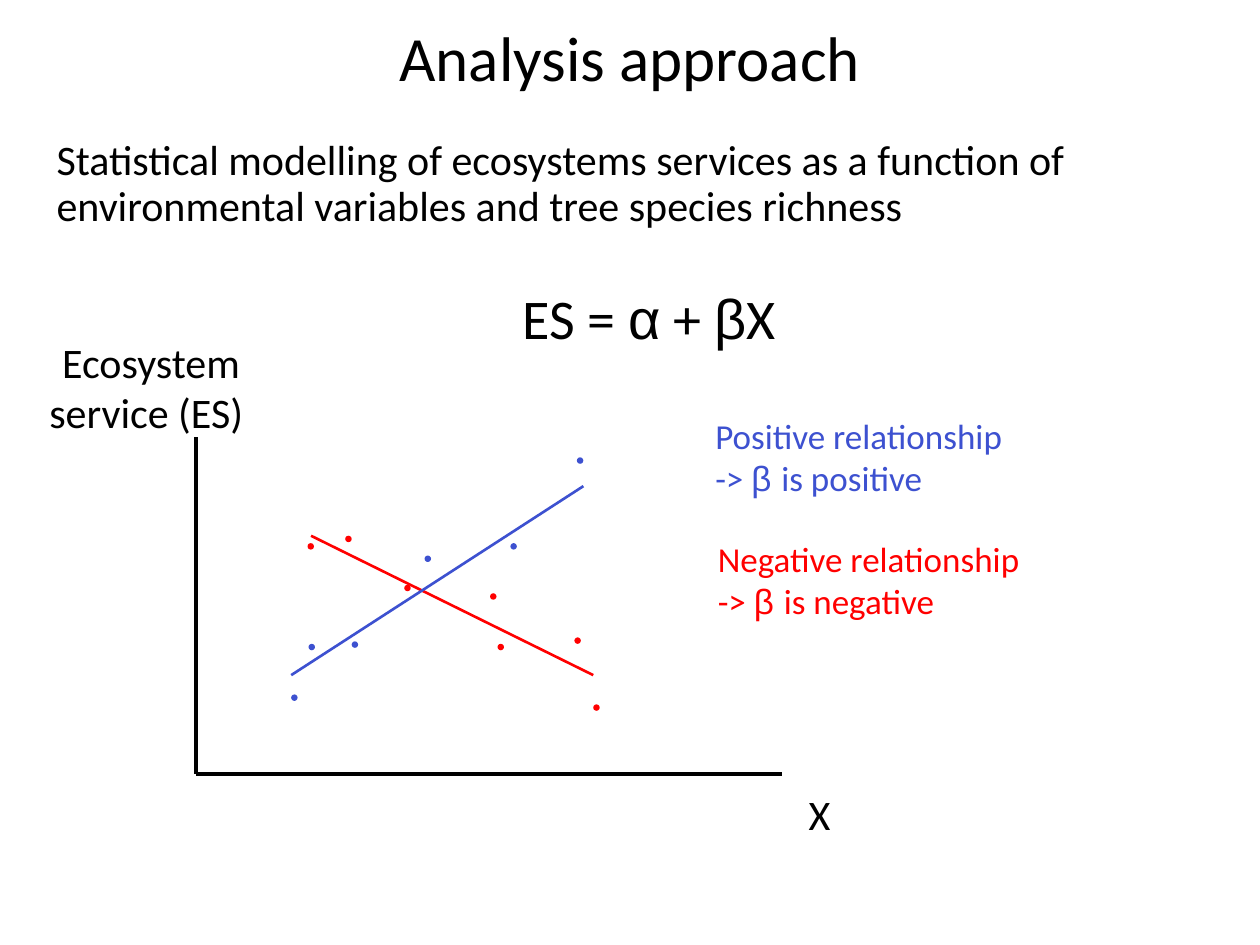
from typing import NamedTuple

import pptx
import pptx.dml.color
import pptx.enum.shapes
import pptx.enum.text
import pptx.oxml.ns
import pptx.slide
import pptx.text.text
import pptx.util
from lxml import etree

Cm = pptx.util.Cm
RGBColor = pptx.dml.color.RGBColor
Align = pptx.enum.text.PP_ALIGN
Anchor = pptx.enum.text.MSO_ANCHOR

BLACK = RGBColor(0x00, 0x00, 0x00)
RED = RGBColor(0xFF, 0x00, 0x00)
BLUE = RGBColor(0x3D, 0x51, 0xD0)
LATIN_FONT = "Calibri"
GREEK_FONT = "Arial"
DOT_SIZE = 0.13

Point = tuple[float, float]


class Box(NamedTuple):
    """Left, top, width and height in centimetres."""
    left: float
    top: float
    width: float
    height: float


class Relationship(NamedTuple):
    sign: str
    color: RGBColor
    label: Box
    start: Point
    end: Point
    dots: list[Point]


RELATIONSHIPS = [
    Relationship("negative", RED, Box(14.22, 10.72, 8.41, 1.96), (6.27, 10.8), (11.96, 13.61),
                 [(6.2, 10.95), (6.96, 10.8), (8.15, 11.79), (9.88, 11.96),
                  (10.03, 12.98), (11.96, 14.2), (11.58, 12.85)]),
    Relationship("positive", BLUE, Box(14.17, 8.23, 8.41, 1.96), (5.87, 13.61), (11.76, 9.8),
                 [(5.87, 14), (6.22, 12.98), (7.09, 12.93), (8.56, 11.2),
                  (10.29, 10.95), (11.63, 9.22)]),
]


def add_span(para: pptx.text.text._Paragraph, text: str, size: float, color: RGBColor) -> None:
    span = para.add_run()
    span.text = text
    span.font.size = pptx.util.Pt(size)
    span.font.color.rgb = color
    is_greek = text.strip() in ("α", "β")
    span.font.name = GREEK_FONT if is_greek else LATIN_FONT


def add_text(page: pptx.slide.Slide, box: Box, *lines: list[str], size: float = 24,
             color: RGBColor = BLACK, align: Align = Align.LEFT,
             anchor: Anchor = Anchor.TOP, line_spacing: float = 1.0) -> None:
    """Write one paragraph whose lines, each a list of spans, are split by line breaks."""
    frame = page.shapes.add_textbox(*map(Cm, box)).text_frame
    frame.word_wrap = True
    frame.vertical_anchor = anchor
    para = frame.paragraphs[0]
    para.alignment = align
    para.line_spacing = line_spacing
    for number, line in enumerate(lines):
        if number:
            para.add_line_break()
        for text in line:
            add_span(para, text, size, color)


def add_line(page: pptx.slide.Slide, start: Point, end: Point,
             color: RGBColor, width: float) -> None:
    line = page.shapes.add_connector(pptx.enum.shapes.MSO_CONNECTOR.STRAIGHT,
                                     *map(Cm, start + end))
    line.line.color.rgb = color
    line.line.width = pptx.util.Pt(width)
    etree.SubElement(line._element.spPr, pptx.oxml.ns.qn("a:effectLst"))


def add_dot(page: pptx.slide.Slide, corner: Point, color: RGBColor) -> None:
    dot = page.shapes.add_shape(pptx.enum.shapes.MSO_SHAPE.OVAL,
                                *map(Cm, corner + (DOT_SIZE, DOT_SIZE)))
    dot.shadow.inherit = False
    dot.fill.solid()
    dot.fill.fore_color.rgb = color
    dot.line.fill.background()


def add_relationship(page: pptx.slide.Slide, item: Relationship) -> None:
    for corner in item.dots:
        add_dot(page, corner, item.color)
    add_line(page, item.start, item.end, item.color, 1.5)
    add_text(page, item.label, [f"{item.sign.capitalize()} relationship "],
             ["-> ", "β ", f"is {item.sign}"], size=20, color=item.color)


def main() -> None:
    deck = pptx.Presentation()
    deck.slide_width, deck.slide_height = Cm(25.4), Cm(19.05)
    page = deck.slides.add_slide(deck.slide_layouts[6])

    add_text(page, Box(0.89, 2.69, 23.6, 2.39),
             ["Statistical modelling of ecosystems services as a function of "
              "environmental variables and tree species richness"], line_spacing=0.9)
    add_text(page, Box(1.9, -0.46, 21.59, 3.18), ["Analysis approach"],
             size=36, align=Align.CENTER, anchor=Anchor.MIDDLE)

    origin = (3.96, 15.6)
    for axis_end in [(3.96, 8.81), (15.77, 15.6)]:
        add_line(page, origin, axis_end, BLACK, 2.25)
    add_text(page, Box(0.71, 6.65, 4.67, 1.8), ["Ecosystem"], ["service (ES) "],
             align=Align.CENTER)
    add_text(page, Box(16.05, 15.77, 1.6, 1.27), ["X"])
    add_text(page, Box(10.29, 5.59, 8.15, 1.63), ["ES = ", "α", " + ", "β", "X"], size=32)

    for item in RELATIONSHIPS:
        add_relationship(page, item)

    deck.save("out.pptx")


if __name__ == "__main__":
    main()
